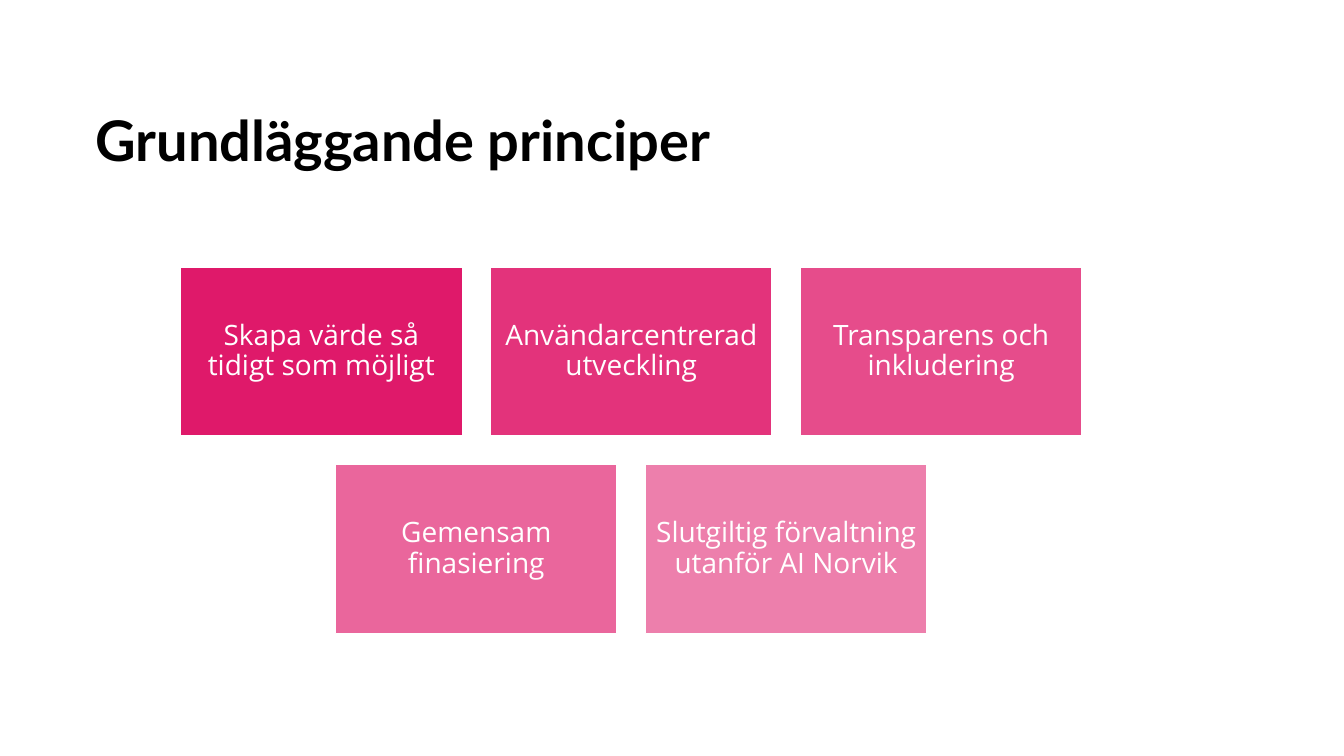
import pptx
import pptx.util
import pptx.dml.color
import pptx.enum.shapes
import pptx.enum.text
import pptx.oxml
from pptx.oxml.ns import qn
from pptx.util import Cm, Pt

BLACK = pptx.dml.color.RGBColor(0x00, 0x00, 0x00)
WHITE = pptx.dml.color.RGBColor(0xFF, 0xFF, 0xFF)
PINK = pptx.dml.color.RGBColor(0xDC, 0x00, 0x5A)

CARD_W, CARD_H, GAP = 7.1, 4.26, 0.71
CENTRE_X, TOP = 15.91, 6.73
INSET = Cm(0.21)

ROWS = [
    ["Skapa värde så tidigt som möjligt",
     "Användarcentrerad utveckling",
     "Transparens och inkludering"],
    ["Gemensam finasiering",
     "Slutgiltig förvaltning utanför AI Norvik"],
]


def add_text(tf, text, font, size, color, bold=False):
    tf.word_wrap = True
    p = tf.paragraphs[0]
    p.line_spacing = 0.9
    r = p.add_run()
    r.text = text
    r.font.name = font
    r.font.size = Pt(size)
    r.font.bold = bold
    r.font.color.rgb = color
    return p


def set_opacity(sp, percent):
    color = sp.fill._xPr.find(qn("a:solidFill"))[0]
    alpha = pptx.oxml.parse_xml(
        '<a:alpha xmlns:a="http://schemas.openxmlformats.org/drawingml/2006/main"'
        f' val="{percent * 1000}"/>')
    color.append(alpha)


def add_title(s, text):
    box = s.shapes.add_textbox(Cm(2.16), Cm(2.72), Cm(27.15), Cm(2.9))
    add_text(box.text_frame, text, "Lato", 40, BLACK, bold=True)


def add_card(s, left, top, text, opacity):
    sp = s.shapes.add_shape(pptx.enum.shapes.MSO_SHAPE.RECTANGLE,
                            Cm(left), Cm(top), Cm(CARD_W), Cm(CARD_H))
    sp.shadow.inherit = False
    sp.fill.solid()
    sp.fill.fore_color.rgb = PINK
    set_opacity(sp, opacity)
    sp.line.color.rgb = WHITE
    sp.line.width = Pt(1)
    tf = sp.text_frame
    tf.margin_left = tf.margin_right = tf.margin_top = tf.margin_bottom = INSET
    tf.vertical_anchor = pptx.enum.text.MSO_ANCHOR.MIDDLE
    p = add_text(tf, text, "Open Sans", 20, WHITE)
    p.alignment = pptx.enum.text.PP_ALIGN.CENTER


def add_card_rows(s, rows):
    """Centre each row of cards and fade the colour from card to card."""
    opacity = 90
    for i, row in enumerate(rows):
        left = CENTRE_X - (len(row) * (CARD_W + GAP) - GAP) / 2
        top = TOP + i * (CARD_H + GAP)
        for j, text in enumerate(row):
            add_card(s, left + j * (CARD_W + GAP), top, text, opacity)
            opacity -= 10


def main():
    prs = pptx.Presentation()
    prs.slide_width, prs.slide_height = Cm(33.87), Cm(19.05)
    s = prs.slides.add_slide(prs.slide_layouts[6])
    add_title(s, "Grundläggande principer")
    add_card_rows(s, ROWS)
    prs.save("out.pptx")


if __name__ == "__main__":
    main()
